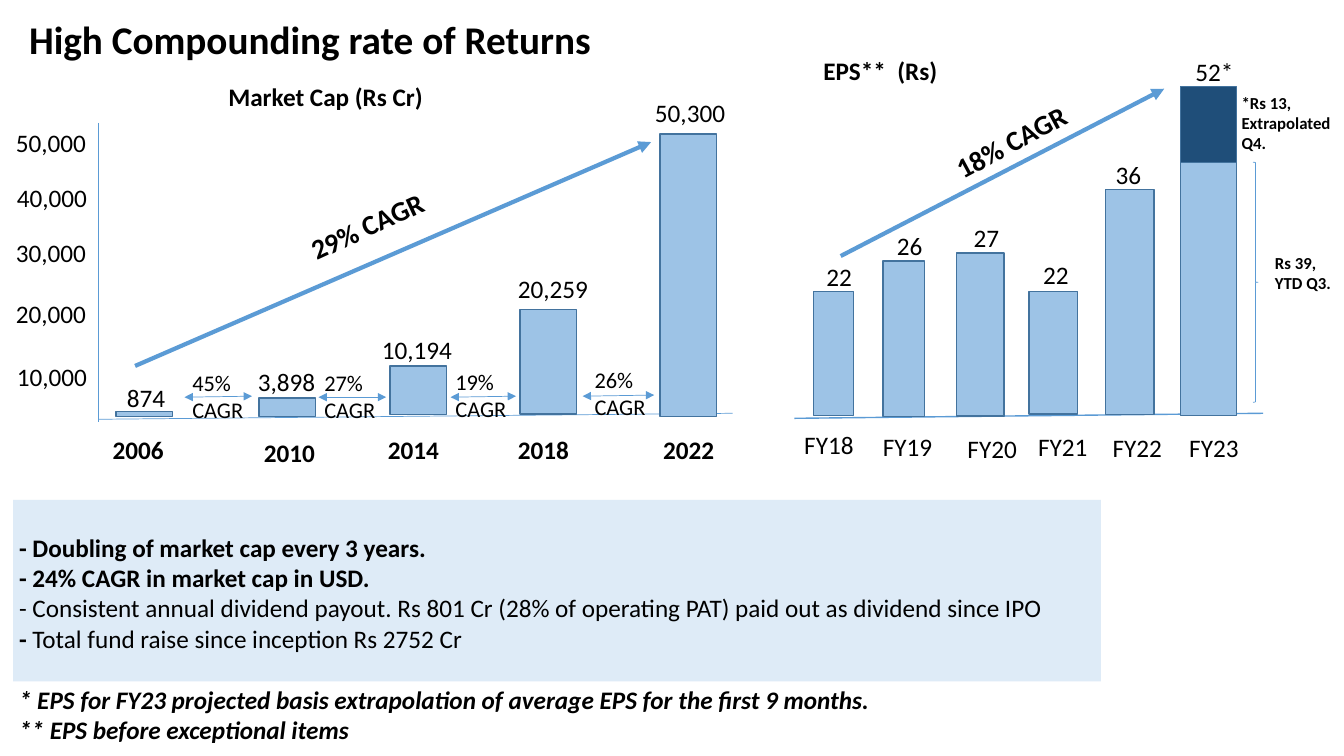
from lxml import etree
from pptx import Presentation
from pptx.dml.color import RGBColor
from pptx.enum import shapes, text
from pptx.oxml import ns
from pptx.util import Pt

BLACK = RGBColor(0x00, 0x00, 0x00)
ACCENT = RGBColor(0x5B, 0x9B, 0xD5)
BAR = RGBColor(0x9D, 0xC3, 0xE6)
BAR_EDGE = RGBColor(0x43, 0x73, 0x9E)
EXTRAPOLATED = RGBColor(0x1F, 0x4E, 0x79)
PANEL = RGBColor(0xDE, 0xEB, 0xF7)

BOLD = {"bold": True}
SMALL_BOLD = {"size": Pt(12), "bold": True}
RATE = {"size": Pt(20), "bold": True}
RECTANGLE = shapes.MSO_SHAPE.RECTANGLE

# Bar (left, top, width, height), value (text, left, top, width), label (text, left, top)
MARKET_CAP = [
    ((82.8, 293.8, 40.3, 3.6), ("874", 83.5, 269.3, 49), ("2006", 73.4, 306.7)),
    ((185, 284.4, 40.3, 13), ("3,898", 177.1, 257.8, 56.2), ("2010", 181.4, 308.9)),
    ((278.6, 261.4, 40.3, 34.6), ("10,194", 265.7, 235.4, 64.8), ("2014", 270, 306.7)),
    ((371.5, 221, 40.3, 74.9), ("20,259", 362.9, 191.5, 64.8), ("2018", 362.9, 306.7)),
    ((471.6, 95.8, 40.3, 201.6), ("50,300", 460.8, 66.2, 64.8), ("2022", 466.6, 306.7)),
]
EPS = [
    ((581, 208.1, 28.8, 88.6), ("22", 583.2, 182.9, 35.3), ("FY18", 567.4, 303.1)),
    ((630.7, 186.5, 29.5, 110.9), ("26", 633.6, 161.3, 35.3), ("FY19", 623.5, 304.6)),
    ((683.3, 180.7, 33.8, 116.6), ("27", 688.3, 155.5, 35.3), ("FY20", 684, 306)),
    ((735.1, 208.1, 34.6, 87.8), ("22", 738, 181.4, 35.3), ("FY21", 734.4, 304.6)),
    ((789.8, 135.4, 34.6, 160.6), ("36", 789.8, 110.2, 35.3), ("FY22", 787.7, 305.3)),
    ((843.1, 115.9, 40.3, 180.7), ("52*", 846.7, 36.7, 53.3), ("FY23", 842.4, 305.3)),
]
AXIS_LABELS = [("10,000", 5, 254.2), ("20,000", 4.3, 209.5), ("30,000", 4.3, 166.3),
               ("40,000", 5, 126.7), ("50,000", 4.3, 87.1)]
# Text, its left, top and width, then the arrow's two ends
PERIOD_RATES = [
    ("45% CAGR", 130.3, 259.9, 70.6, (131.8, 283.7), (180, 283)),
    ("27% CAGR", 224.6, 259.9, 65.5, (227.5, 283.7), (275.8, 283.7)),
    ("19% CAGR", 318.2, 259.2, 72.7, (321.8, 283.7), (368.6, 283)),
    ("26% CAGR", 417.6, 257.8, 65.5, (416.2, 283), (467.3, 282.2)),
]
# Paragraphs: runs with their format, and the space before
NOTES = [
    ([("- Doubling of market cap every 3 years.", BOLD)], 0),
    ([("- 24% CAGR in market cap in USD.", BOLD)], 0),
    ([("- Consistent annual dividend payout. Rs 801 Cr (28% of operating PAT) "
       "paid out as dividend since IPO", {})], 0),
    ([("- ", BOLD), ("Total fund raise since inception Rs 2752 Cr", {})], 0),
    ([("* EPS for FY23 projected basis extrapolation of average EPS "
       "for the first 9 months.", {"bold": True, "italic": True})], 22),
    ([("** EPS before exceptional items", {"bold": True, "italic": True})], 0),
]


def add_paragraphs(page, area, paragraphs, rotation=0, **layout):
    box = page.shapes.add_textbox(*map(Pt, area))
    box.rotation = rotation
    frame = box.text_frame
    frame.word_wrap = True
    frame.vertical_anchor = layout.pop("anchor", text.MSO_ANCHOR.TOP)
    for index, (runs, gap) in enumerate(paragraphs):
        para = frame.add_paragraph() if index else frame.paragraphs[0]
        for name, value in {"space_before": Pt(gap), **layout}.items():
            setattr(para, name, value)
        for words, style in runs:
            span = para.add_run()
            span.text = words
            span.font.color.rgb = BLACK
            for name, value in {"name": "Calibri", "size": Pt(18), **style}.items():
                setattr(span.font, name, value)


def add_label(page, words, area, style=None, **layout):
    add_paragraphs(page, area, [([(words, style or {})], 0)], **layout)


def add_block(page, area, fill=None, edge=None, weight=1, kind=RECTANGLE):
    block = page.shapes.add_shape(kind, *map(Pt, area))
    block.shadow.inherit = False
    if fill is None:
        block.fill.background()
    else:
        block.fill.solid()
        block.fill.fore_color.rgb = fill
    if edge is None:
        block.line.fill.background()
    else:
        block.line.color.rgb = edge
        block.line.width = Pt(weight)


def add_line(page, start, end, weight, heads=()):
    line = page.shapes.add_connector(shapes.MSO_CONNECTOR.STRAIGHT,
                                     *map(Pt, (*start, *end)))
    line.line.color.rgb = ACCENT
    line.line.width = Pt(weight)
    for head in heads:
        etree.SubElement(line.line._get_or_add_ln(), ns.qn("a:" + head), type="triangle")
    etree.SubElement(line._element.spPr, ns.qn("a:effectLst"))


def add_bars(page, rows, label_width, label_style):
    for bar, (value, left, top, width), (label, label_left, label_top) in rows:
        add_block(page, bar, BAR, BAR_EDGE)
        add_label(page, value, (left, top, width, 28.8))
        add_label(page, label, (label_left, label_top, label_width, 28.8), label_style)


def add_market_cap(page):
    add_label(page, "Market Cap (Rs Cr)", (148.7, 54.4, 167.8, 30), BOLD,
              alignment=text.PP_ALIGN.CENTER)
    add_line(page, (70.6, 299.5), (523.4, 295.2), 0.5)
    add_line(page, (70.6, 87.8), (70.6, 301.7), 0.5)
    for words, left, top in AXIS_LABELS:
        add_label(page, words, (left, top, 66, 28.8))
    add_bars(page, MARKET_CAP, 51.8, BOLD)

    # Growth rates, overall and per period
    add_line(page, (96.5, 261.4), (465.1, 101.5), 3, ["tailEnd"])
    add_label(page, "29% CAGR", (209.5, 133.9, 156.2, 31.7), RATE, rotation=335.3)
    for words, left, top, width, start, end in PERIOD_RATES:
        add_line(page, start, end, 0.5, ["headEnd", "tailEnd"])
        add_label(page, words, (left, top, width, 46), {"size": Pt(16)})


def add_eps(page):
    add_label(page, "EPS**  (Rs)", (581, 36, 297.4, 28.8), BOLD)
    add_line(page, (902.2, 295.2), (567.4, 298.8), 1)
    add_bars(page, EPS, 52.6, {})
    add_line(page, (600.5, 182.9), (831.6, 63.4), 3, ["tailEnd"])
    add_label(page, "18% CAGR", (671.8, 84.2, 105.1, 31.7), RATE, rotation=331.6)

    # Split of the last year
    add_block(page, (843.1, 61.9, 40.3, 54), EXTRAPOLATED, BAR_EDGE)
    add_block(page, (895, 115.9, 3.6, 171.4), edge=ACCENT, weight=0.5,
              kind=shapes.MSO_SHAPE.RIGHT_BRACE)
    add_label(page, "Rs 39, YTD Q3.", (903.6, 177.1, 56.9, 36), SMALL_BOLD)
    add_label(page, "*Rs 13, Extrapolated Q4.", (879.8, 62.6, 83.5, 51.1), SMALL_BOLD)


def main():
    deck = Presentation()
    deck.slide_width, deck.slide_height = Pt(960), Pt(540)
    page = deck.slides.add_slide(deck.slide_layouts[6])
    add_label(page, "High Compounding rate of Returns", (13.7, 9.4, 828, 40.3),
              {"size": Pt(28), "bold": True}, anchor=text.MSO_ANCHOR.MIDDLE,
              line_spacing=0.9)
    add_market_cap(page)
    add_eps(page)

    # Key points and footnotes
    add_block(page, (9.4, 357.1, 776.9, 129.6), PANEL)
    add_paragraphs(page, (6.5, 376.6, 769.7, 159.8), NOTES)
    deck.save("out.pptx")


if __name__ == "__main__":
    main()
